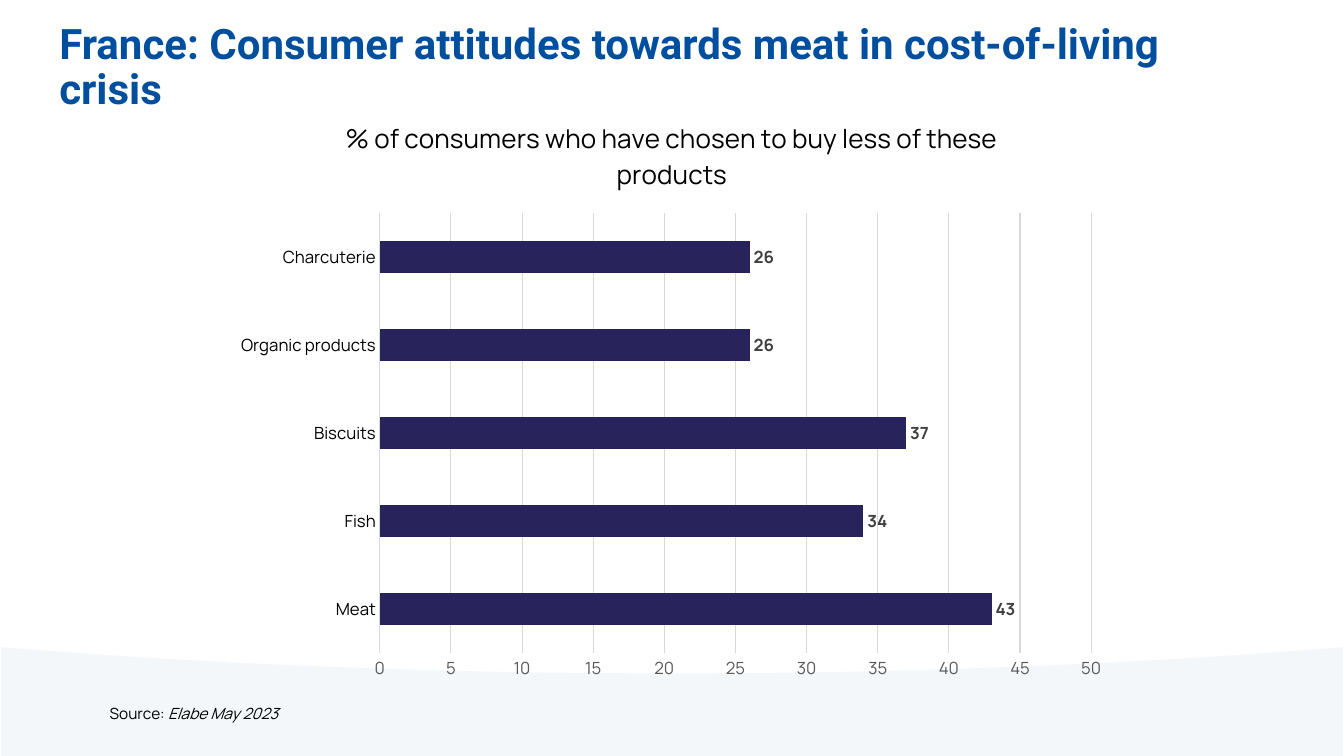
from lxml import etree
from pptx import Presentation
from pptx.chart.data import CategoryChartData
from pptx.dml.color import RGBColor as Color
from pptx.enum.chart import XL_CHART_TYPE as ChartType
from pptx.enum.chart import XL_LABEL_POSITION as LabelPosition
from pptx.enum.chart import XL_TICK_MARK as TickMark
from pptx.enum.text import MSO_ANCHOR as Anchor
from pptx.oxml import parse_xml
from pptx.oxml.ns import nsdecls, qn
from pptx.util import Pt

COLORS = {
    "wave": "93B8C9", "title": "004F9F", "text": "000000", "bar": "28235B",
    "grid": "D9D9D9", "scale": "595959", "label": "404040",
}


def set_font(font, size, color, name="Manrope", bold=False, italic=False):
    font.name, font.size = name, Pt(size)
    font.bold, font.italic = bold, italic
    font.color.rgb = Color.from_string(COLORS[color])


def add_text(page, spans, left, top, width, height, line_spacing=1.0, **style):
    box = page.shapes.add_textbox(Pt(left), Pt(top), Pt(width), Pt(height))
    frame = box.text_frame
    frame.word_wrap = True
    frame.vertical_anchor = Anchor.TOP
    para = frame.paragraphs[0]
    para.line_spacing = line_spacing
    for text, italic in spans:
        span = para.add_run()
        span.text = text
        set_font(span.font, italic=italic, **style)


deck = Presentation()
deck.slide_width, deck.slide_height = Pt(960), Pt(540)
page = deck.slides.add_slide(deck.slide_layouts[6])

# Pale wave along the bottom: a cubic curve, mirrored about the centre
curve = [(480, 481), (312.5, 481), (150.5, 474.5), (0.7, 462.2)]
weights = (1, 3, 3, 1)
right_half = []
for step in range(41):
    t = step / 40
    x, y = (sum(weights[i] * (1 - t) ** (3 - i) * t ** i * curve[i][axis]
                for i in range(4)) for axis in (0, 1))
    right_half.append((960 - x, y))
left_half = [(960 - x, y) for x, y in reversed(right_half)]
outline = left_half + right_half[1:] + [(959.3, 540), (0.7, 540)]
points = [(Pt(x), Pt(y)) for x, y in outline]
builder = page.shapes.build_freeform(*points[0], scale=1.0)
builder.add_line_segments(points[1:], close=True)
wave = builder.convert_to_shape()
wave.shadow.inherit = False
wave.line.fill.background()
wave.fill.solid()
wave.fill.fore_color.rgb = Color.from_string(COLORS["wave"])
wave_color = wave.fill._xPr.find(qn("a:solidFill"))[0]
etree.SubElement(wave_color, qn("a:alpha")).set("val", "10000")

# Title and source
add_text(page, [("France: Consumer attitudes towards meat in cost-of-living crisis", False)],
         35.3, 13, 864, 49, line_spacing=0.9, size=30, color="title", name="Roboto", bold=True)
add_text(page, [("Source: ", False), ("Elabe May 2023", True)],
         71.3, 499.7, 691, 21, size=11, color="text")

# Bar chart
data = CategoryChartData()
data.categories = ["Meat", "Fish", "Biscuits", "Organic products", "Charcuterie"]
data.add_series("Series 1", (43, 34, 37, 26, 26))
chart = page.shapes.add_chart(ChartType.BAR_CLUSTERED, Pt(160), Pt(67.7),
                              Pt(640), Pt(427), data).chart
set_font(chart.font, 10, "text")
chart.has_legend = False
chart.has_title = True
heading = chart.chart_title.text_frame
heading.text = "% of consumers who have chosen to buy less of these products"
set_font(heading.paragraphs[0].runs[0].font, 18.6, "text")
chart.chart_title.include_in_layout = False

# Fixed plot area
layout = {"layoutTarget": "inner", "xMode": "edge", "yMode": "edge",
          "x": 0.174, "y": 0.198, "w": 0.794, "h": 0.736}
parts = "".join(f'<c:{key} val="{value}"/>' for key, value in layout.items())
plot_area = chart._chartSpace.chart.plotArea
for old_layout in plot_area.findall(qn("c:layout")):
    plot_area.remove(old_layout)
plot_area.insert(0, parse_xml(
    f'<c:layout {nsdecls("c")}><c:manualLayout>{parts}</c:manualLayout></c:layout>'))

# Axes
names, scale = chart.category_axis, chart.value_axis
for axis, color in ((names, "text"), (scale, "scale")):
    axis.major_tick_mark = axis.minor_tick_mark = TickMark.NONE
    set_font(axis.tick_labels.font, 12, color)
scale.minimum_scale, scale.maximum_scale, scale.major_unit = 0, 50, 5
scale.format.line.fill.background()
scale.has_major_gridlines = True
for line in (names.format.line, scale.major_gridlines.format.line):
    line.color.rgb = Color.from_string(COLORS["grid"])
    line.width = Pt(0.75)

# Bars and their labels
plot = chart.plots[0]
plot.gap_width = 182
plot.vary_by_categories = False
bars = plot.series[0]
bars.format.fill.solid()
bars.format.fill.fore_color.rgb = Color.from_string(COLORS["bar"])
labels = bars.data_labels
labels.show_value = True
labels.position = LabelPosition.OUTSIDE_END
set_font(labels.font, 12, "label", bold=True)

deck.save("out.pptx")
